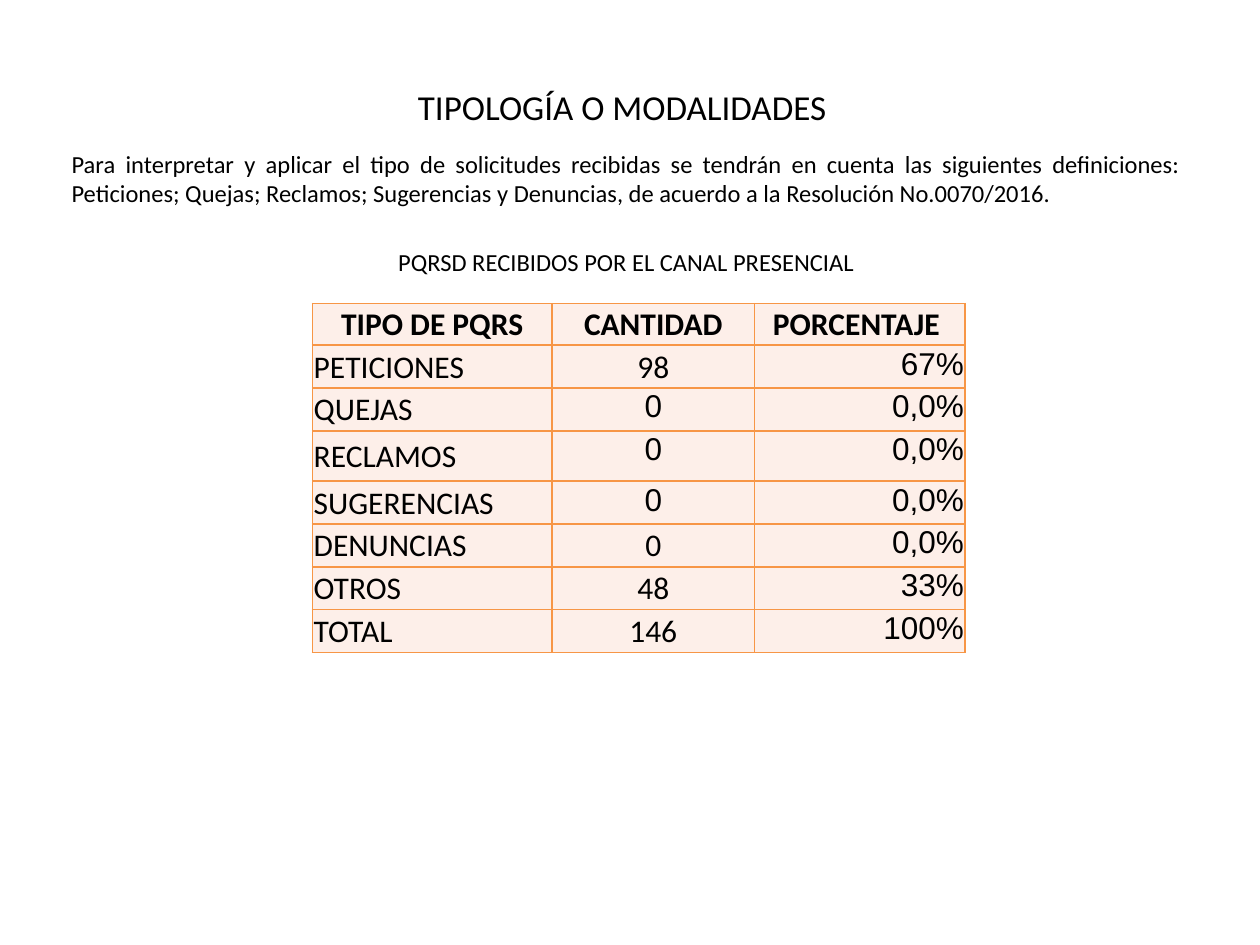
from dataclasses import dataclass

from lxml.etree import SubElement
from pptx import Presentation
from pptx.dml.color import RGBColor
from pptx.enum.text import MSO_ANCHOR, PP_ALIGN
from pptx.oxml.ns import qn
from pptx.util import Inches, Pt


@dataclass(frozen=True)
class Theme:
    ink: str = "000000"
    border: str = "F79646"
    cell: str = "FDEFE9"
    heading: int = 20
    body: int = 14
    table: int = 18
    font: str = "Calibri"
    figures: str = "Arial"


theme = Theme()


def write(para, text, size, font=theme.font, bold=False, align=PP_ALIGN.LEFT, before=0):
    para.alignment = align
    para.space_before = Pt(before)
    span = para.add_run()
    span.text = text
    span.font.size = Pt(size)
    span.font.name = font
    span.font.bold = bold
    span.font.color.rgb = RGBColor.from_string(theme.ink)


def outline(cell):
    properties = cell._tc.get_or_add_tcPr()
    for position, side in enumerate(("lnL", "lnR", "lnT", "lnB")):
        line = SubElement(properties, qn(f"a:{side}"), w=str(Pt(1)))
        fill = SubElement(line, qn("a:solidFill"))
        SubElement(fill, qn("a:srgbClr"), val=theme.border)
        properties.insert(position, line)


deck = Presentation()
deck.slide_width = Inches(10)
deck.slide_height = Inches(7.5)
page = deck.slides.add_slide(deck.slide_layouts[6])

title_box = page.shapes.add_textbox(Inches(0.5), Inches(0.48), Inches(9), Inches(0.73))
title = title_box.text_frame
title.word_wrap = True
title.vertical_anchor = MSO_ANCHOR.MIDDLE
title.margin_right = Inches(0.22)
write(title.paragraphs[0], "TIPOLOGÍA O MODALIDADES", theme.heading, align=PP_ALIGN.CENTER)

body_box = page.shapes.add_textbox(Inches(0.47), Inches(1.13), Inches(9), Inches(4.9))
body = body_box.text_frame
body.word_wrap = True
write(
    body.paragraphs[0],
    "Para interpretar y aplicar el tipo de solicitudes recibidas se tendrán en cuenta "
    "las siguientes definiciones: Peticiones; Quejas; Reclamos; Sugerencias y Denuncias, "
    "de acuerdo a la Resolución No.0070/2016.",
    theme.body,
    align=PP_ALIGN.JUSTIFY,
)
write(
    body.add_paragraph(),
    "PQRSD RECIBIDOS POR EL CANAL PRESENCIAL",
    theme.body,
    align=PP_ALIGN.CENTER,
    before=22.5,
)

rows = [
    ("TIPO DE PQRS", "CANTIDAD", "PORCENTAJE "),
    ("PETICIONES", "98", "67%"),
    ("QUEJAS", "0", "0,0%"),
    ("RECLAMOS", "0", "0,0%"),
    ("SUGERENCIAS", "0", "0,0%"),
    ("DENUNCIAS", "0", "0,0%"),
    ("OTROS", "48", "33%"),
    ("TOTAL", "146", "100%"),
]
widths = (1.9, 1.61, 1.67)
heights = (0.33, 0.34, 0.34, 0.4, 0.34, 0.34, 0.34, 0.34)
aligns = (PP_ALIGN.LEFT, PP_ALIGN.CENTER, PP_ALIGN.RIGHT)
arial_counts = ("QUEJAS", "RECLAMOS", "SUGERENCIAS")

table = page.shapes.add_table(
    len(rows), len(widths), Inches(2.48), Inches(2.41), Inches(sum(widths)), Inches(sum(heights))
).table
for column, width in zip(table.columns, widths):
    column.width = Inches(width)
for row, height in zip(table.rows, heights):
    row.height = Inches(height)

for row_index, values in enumerate(rows):
    header = row_index == 0
    for column_index, value in enumerate(values):
        cell = table.cell(row_index, column_index)
        cell.margin_left = cell.margin_right = cell.margin_top = Inches(0.01)
        cell.margin_bottom = 0
        cell.fill.solid()
        cell.fill.fore_color.rgb = RGBColor.from_string(theme.cell)
        outline(cell)
        percentage = column_index == 2 and not header
        arial = percentage or (column_index == 1 and values[0] in arial_counts)
        cell.vertical_anchor = MSO_ANCHOR.TOP if arial else MSO_ANCHOR.MIDDLE
        write(
            cell.text_frame.paragraphs[0],
            value,
            theme.table,
            font=theme.figures if arial else theme.font,
            bold=header,
            align=PP_ALIGN.CENTER if header else aligns[column_index],
        )

deck.save("out.pptx")
